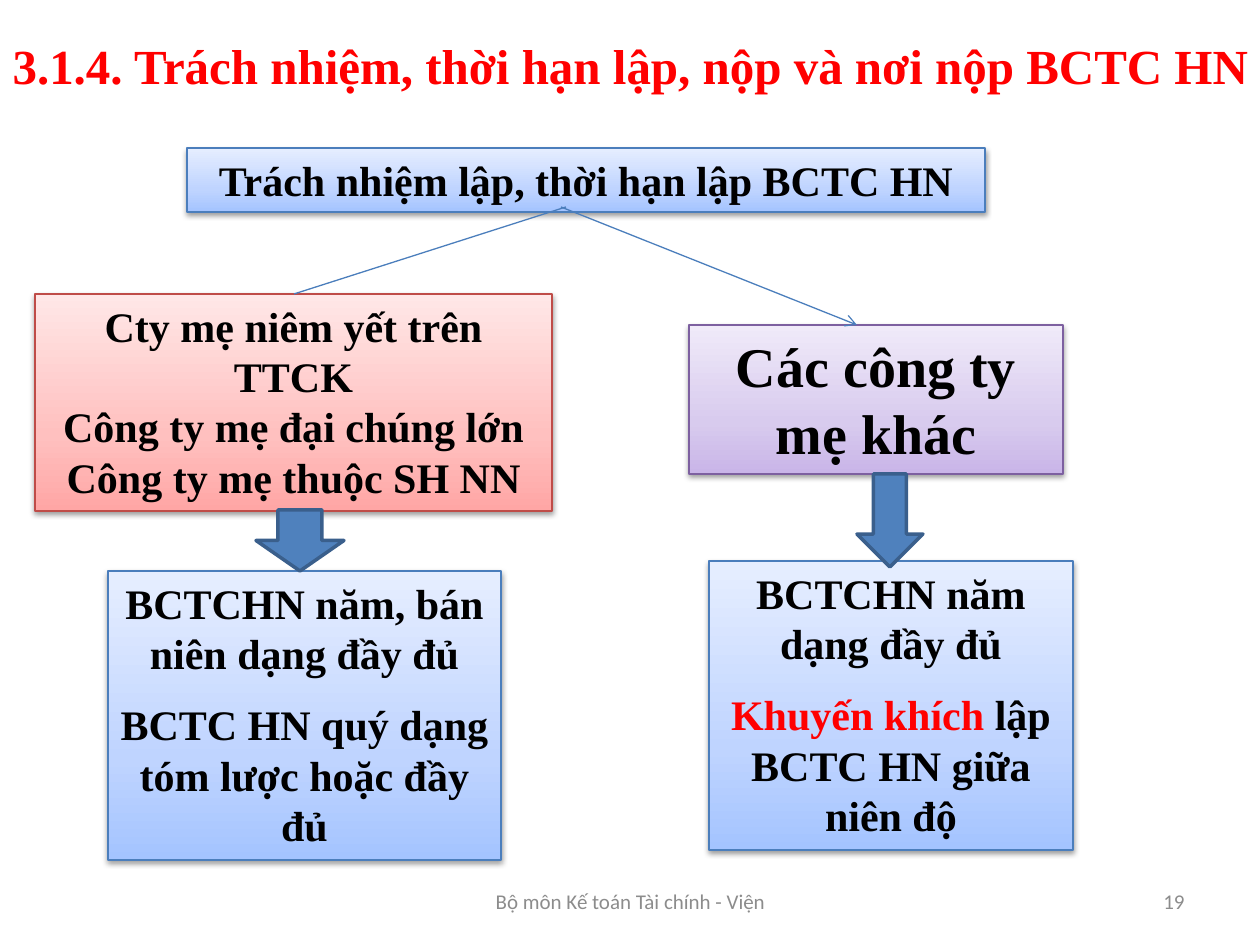
from copy import deepcopy

from lxml import etree
from pptx import Presentation
from pptx import util as u
from pptx.dml.color import RGBColor
from pptx.enum import shapes, text
from pptx.oxml import ns

EMU_PER_PX = 914400 // 126
SERIF = "Times New Roman"
COLORS = {
    "black": "000000", "red": "FF0000", "gray": "8C8C8C",
    "arrow": "4F81BD", "arrow_edge": "3A5F8C", "blue_edge": "4B7EBC",
}
# Border colour, then gradient colours from bottom to top
BOX_STYLES = {
    "blue": (COLORS["blue_edge"], ("A4C4FF", "BFD4FF", "E6EEFF")),
    "red": ("BF4C48", ("FFA6A5", "FFC0BF", "FFE7E7")),
    "purple": ("7D60A0", ("C9B5E8", "D8CBEE", "F0EAF9")),
}
GRADIENT_POSITIONS = (0, 0.35, 1)


def px(*lengths):
    return [u.Emu(length * EMU_PER_PX) for length in lengths]


def rgb(color):
    return RGBColor.from_string(color)


def add_element(parent, tag, **attributes):
    return etree.SubElement(parent, ns.qn(tag), attributes)


def write_text(frame, paragraphs, size=24, font=SERIF, color="black", bold=True,
               align=text.PP_ALIGN.CENTER, anchor=text.MSO_ANCHOR.TOP, space_before=0):
    """Fill a frame; a paragraph is a string or a list of (string, colour) runs."""
    frame.word_wrap = True
    frame.auto_size = text.MSO_AUTO_SIZE.NONE
    frame.vertical_anchor = anchor
    for index, content in enumerate(paragraphs):
        paragraph = frame.add_paragraph() if index else frame.paragraphs[0]
        paragraph.alignment = align
        paragraph.space_before = u.Pt(space_before)
        runs = [(content, color)] if isinstance(content, str) else content
        for words, run_color in runs:
            run = paragraph.add_run()
            run.text = words
            run.font.size = u.Pt(size)
            run.font.name = font
            run.font.bold = bold
            run.font.color.rgb = rgb(COLORS[run_color])


def set_gradient(shape, colors):
    shape.fill.gradient()
    shape.fill.gradient_angle = 90
    stop_list = shape.element.spPr.find(".//" + ns.qn("a:gsLst"))
    stop_list.insert(1, deepcopy(stop_list[0]))
    for stop, position, color in zip(shape.fill.gradient_stops, GRADIENT_POSITIONS, colors):
        stop.position = position
        stop.color.rgb = rgb(color)


def set_shadow(shape):
    shape.shadow.inherit = False
    effects = shape.element.spPr.find(ns.qn("a:effectLst"))
    shadow = add_element(effects, "a:outerShdw", blurRad="40000", dist="20000",
                         dir="5400000", rotWithShape="0")
    color = add_element(shadow, "a:srgbClr", val=COLORS["black"])
    add_element(color, "a:alpha", val="38000")


def add_box(slide, bounds, style, paragraphs, **text_format):
    box = slide.shapes.add_shape(shapes.MSO_SHAPE.RECTANGLE, *px(*bounds))
    edge, gradient = BOX_STYLES[style]
    set_gradient(box, gradient)
    box.line.color.rgb = rgb(edge)
    box.line.width = u.Pt(0.75)
    set_shadow(box)
    write_text(box.text_frame, paragraphs, **text_format)


def add_line(slide, start, end, arrowhead=False):
    line = slide.shapes.add_connector(shapes.MSO_CONNECTOR.STRAIGHT, *px(*start, *end))
    line.line.color.rgb = rgb(COLORS["blue_edge"])
    line.line.width = u.Pt(0.75)
    properties = line.element.spPr
    if arrowhead:
        add_element(properties.find(ns.qn("a:ln")), "a:tailEnd", type="arrow")
    add_element(properties, "a:effectLst")


def add_down_arrow(slide, bounds):
    arrow = slide.shapes.add_shape(shapes.MSO_SHAPE.DOWN_ARROW, *px(*bounds))
    arrow.fill.solid()
    arrow.fill.fore_color.rgb = rgb(COLORS["arrow"])
    arrow.line.color.rgb = rgb(COLORS["arrow_edge"])
    arrow.line.width = u.Pt(2)
    arrow.shadow.inherit = False


def add_title(slide, bounds, words):
    title = slide.shapes.title
    title.left, title.top, title.width, title.height = px(*bounds)
    write_text(title.text_frame, [words], size=28, color="red",
               align=text.PP_ALIGN.LEFT, space_before=12)


def add_footer(slide, bounds, words, align):
    footer = slide.shapes.add_textbox(*px(*bounds))
    write_text(footer.text_frame, [words], size=12, font="Calibri", color="gray",
               bold=False, align=align, anchor=text.MSO_ANCHOR.MIDDLE)


def main():
    presentation = Presentation()
    presentation.slide_width, presentation.slide_height = px(1260, 945)
    slide = presentation.slides.add_slide(presentation.slide_layouts.get_by_name("Title Only"))

    add_title(slide, (0, 29, 1289, 72),
              "3.1.4. Trách nhiệm, thời hạn lập, nộp và nơi nộp BCTC HN")
    add_box(slide, (187, 148, 798, 64), "blue", ["Trách nhiệm lập, thời hạn lập BCTC HN"])
    add_box(slide, (35, 294, 517, 217), "red", [
        "Cty mẹ niêm yết trên TTCK",
        "Công ty mẹ đại chúng lớn",
        "Công ty mẹ thuộc SH NN",
    ])
    add_box(slide, (689, 325, 374, 149), "purple", ["Các công ty mẹ khác"], size=32)
    add_box(slide, (108, 571, 393, 289), "blue", [
        "BCTCHN năm, bán niên dạng đầy đủ",
        "BCTC HN quý dạng tóm lược hoặc đầy đủ",
    ], space_before=12)
    add_box(slide, (709, 561, 364, 289), "blue", [
        "BCTCHN năm dạng đầy đủ",
        [("Khuyến khích ", "red"), ("lập BCTC HN giữa niên độ", "black")],
    ], space_before=12)

    add_line(slide, (566, 207), (294, 294))
    add_line(slide, (561, 207), (857, 325), arrowhead=True)
    add_down_arrow(slide, (256, 510, 88, 61))
    add_down_arrow(slide, (857, 474, 66, 93))

    add_footer(slide, (903, 876, 294, 50), "19", text.PP_ALIGN.RIGHT)
    add_footer(slide, (431, 876, 399, 50), "Bộ môn Kế toán Tài chính - Viện",
               text.PP_ALIGN.CENTER)
    presentation.save("out.pptx")


if __name__ == "__main__":
    main()
